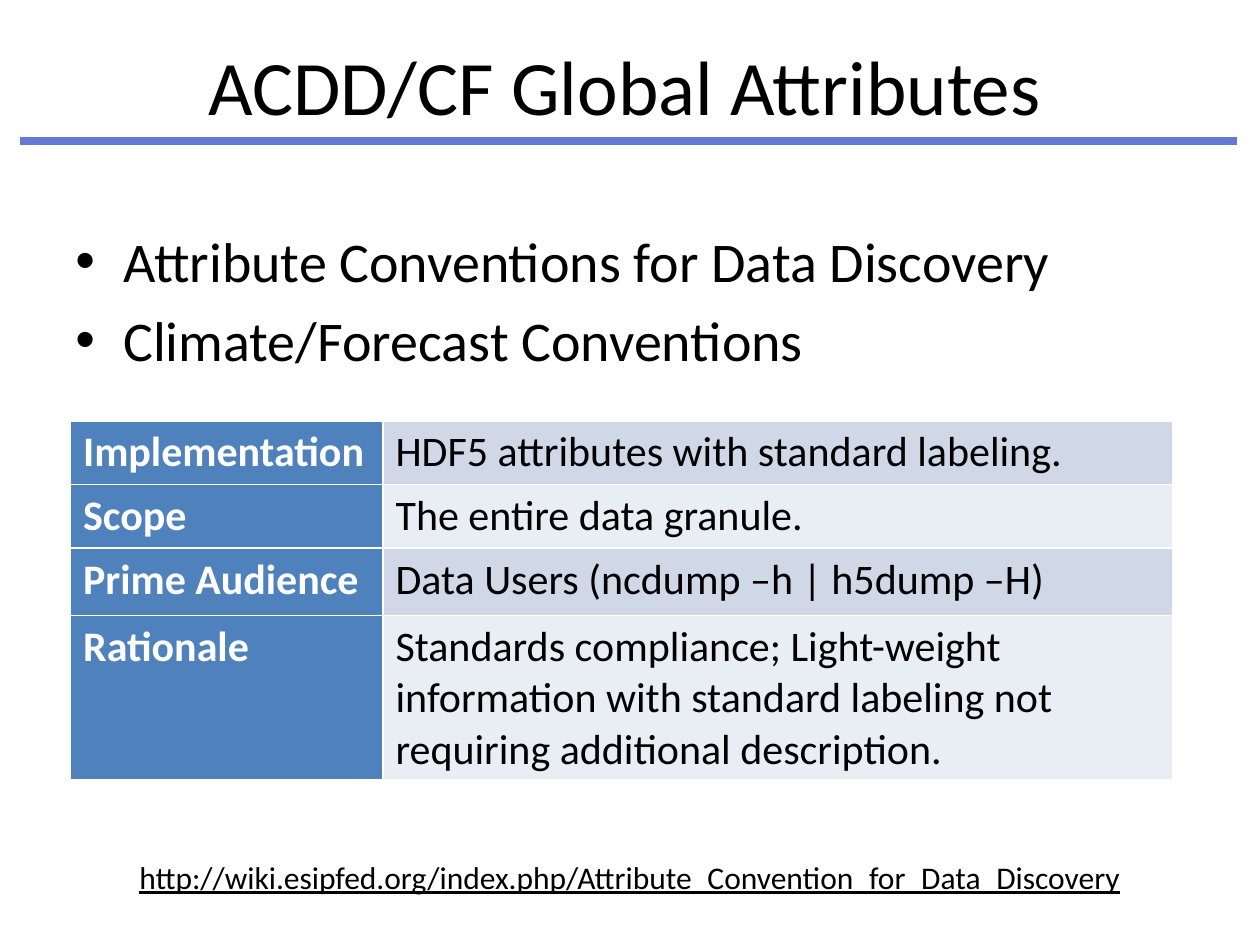
"""Build the slide on ACDD/CF global attributes."""
from dataclasses import dataclass

from lxml.etree import SubElement
from pptx import Presentation
from pptx.dml.color import RGBColor
from pptx.enum.shapes import MSO_CONNECTOR
from pptx.enum.text import MSO_ANCHOR, PP_ALIGN
from pptx.oxml.ns import qn
from pptx.util import Inches, Pt

WIDE, HIGH = 10, 7.5
FONT = "Calibri"
HUES = {"ink": "000000", "paper": "FFFFFF", "rule": "6578D4",
        "head": "4F81BD", "odd": "D0D8E8", "even": "E9EDF4"}


@dataclass
class Box:
    """A frame given in shares of the slide's size."""
    left: float
    top: float
    width: float
    height: float

    def span(self) -> tuple:
        """Return the frame as lengths."""
        return (Inches(self.left * WIDE), Inches(self.top * HIGH),
                Inches(self.width * WIDE), Inches(self.height * HIGH))


@dataclass
class Row:
    """A table row with its share of the table's height."""
    label: str
    note: str
    share: float


TITLE = Box(0.099, 0.0067, 0.794, 0.1667)
LIST = Box(0.05, 0.2333, 0.9, 0.228)
GRID = Box(0.056, 0.4453, 0.875, 0.3787)
LINK = Box(0, 0.9013, 1, 0.0533)
RULE = Box(0.016, 0.1493, 0.966, 0)
COLS = (0.2834, 0.7166)
POINTS = ("Attribute Conventions for Data Discovery",
          "Climate/Forecast Conventions")
ROWS = (
    Row("Implementation", "HDF5 attributes with standard labeling.", 0.178),
    Row("Scope", "The entire data granule.", 0.178),
    Row("Prime Audience", "Data Users (ncdump –h | h5dump –H)", 0.188),
    Row("Rationale", "Standards compliance; Light-weight information with "
        "standard labeling not requiring additional description.", 0.456),
)
URL = "http://wiki.esipfed.org/index.php/Attribute_Convention_for_Data_Discovery"


def tint(name: str) -> RGBColor:
    """Look up a colour."""
    return RGBColor.from_string(HUES[name])


def write(para, text: str, size: float, hue: str = "ink",
          bold: bool = False, under: bool = False) -> None:
    """Add one styled run to a paragraph."""
    run = para.add_run()
    run.text = text
    font = run.font
    font.name, font.size, font.bold = FONT, Pt(size), bold
    font.underline = under
    font.color.rgb = tint(hue)


def frame(slide, box: Box):
    """Add a wrapping text box and return its text frame."""
    text = slide.shapes.add_textbox(*box.span()).text_frame
    text.word_wrap = True
    return text


def head(slide, text: str) -> None:
    """Place and fill the title."""
    shape = slide.shapes.title
    shape.left, shape.top, shape.width, shape.height = TITLE.span()
    shape.text_frame.vertical_anchor = MSO_ANCHOR.MIDDLE
    para = shape.text_frame.paragraphs[0]
    para.alignment = PP_ALIGN.CENTER
    write(para, text, 44)


def rule(slide) -> None:
    """Draw the line under the title."""
    left, top, width, _ = RULE.span()
    line = slide.shapes.add_connector(
        MSO_CONNECTOR.STRAIGHT, left, top, left + width, top)
    line.line.color.rgb = tint("rule")
    line.line.width = Pt(4.5)
    SubElement(line._element.spPr, qn("a:effectLst"))


def points(slide) -> None:
    """Write the bulleted list."""
    text = frame(slide, LIST)
    for num, point in enumerate(POINTS):
        para = text.add_paragraph() if num else text.paragraphs[0]
        para.space_before = Pt(6.4 if num else 0)
        props = para._p.get_or_add_pPr()
        props.set("marL", str(Inches(0.38)))
        props.set("indent", str(-Inches(0.38)))
        SubElement(props, qn("a:buFont"), typeface="Arial")
        SubElement(props, qn("a:buChar"), char="•")
        write(para, point, 32)


def edge(cell) -> None:
    """Give a cell thin borders ahead of its fill."""
    props = cell._tc.get_or_add_tcPr()
    for side in ("lnL", "lnR", "lnT", "lnB"):
        line = SubElement(props, qn(f"a:{side}"), w=str(Pt(1)))
        fill = SubElement(line, qn("a:solidFill"))
        SubElement(fill, qn("a:srgbClr"), val=HUES["paper"])


def put(cell, text: str, fill: str, hue: str, bold: bool) -> None:
    """Style and fill one cell."""
    edge(cell)
    cell.fill.solid()
    cell.fill.fore_color.rgb = tint(fill)
    write(cell.text_frame.paragraphs[0], text, 24, hue, bold)


def grid(slide) -> None:
    """Build the table of attribute facts."""
    span = GRID.span()
    table = slide.shapes.add_table(len(ROWS), len(COLS), *span).table
    table.first_row, table.first_col = False, True
    for col, share in zip(table.columns, COLS):
        col.width = int(span[2] * share)
    for num, row in enumerate(ROWS):
        table.rows[num].height = int(span[3] * row.share)
        put(table.cell(num, 0), row.label, "head", "paper", True)
        put(table.cell(num, 1), row.note,
            "even" if num % 2 else "odd", "ink", False)


def link(slide) -> None:
    """Write the address at the foot."""
    para = frame(slide, LINK).paragraphs[0]
    para.alignment = PP_ALIGN.CENTER
    write(para, URL, 18, under=True)


def main() -> None:
    """Build and save the deck."""
    deck = Presentation()
    deck.slide_width, deck.slide_height = Inches(WIDE), Inches(HIGH)
    slide = deck.slides.add_slide(deck.slide_layouts[5])
    rule(slide)
    head(slide, "ACDD/CF Global Attributes")
    points(slide)
    grid(slide)
    link(slide)
    deck.save("out.pptx")


if __name__ == "__main__":
    main()
